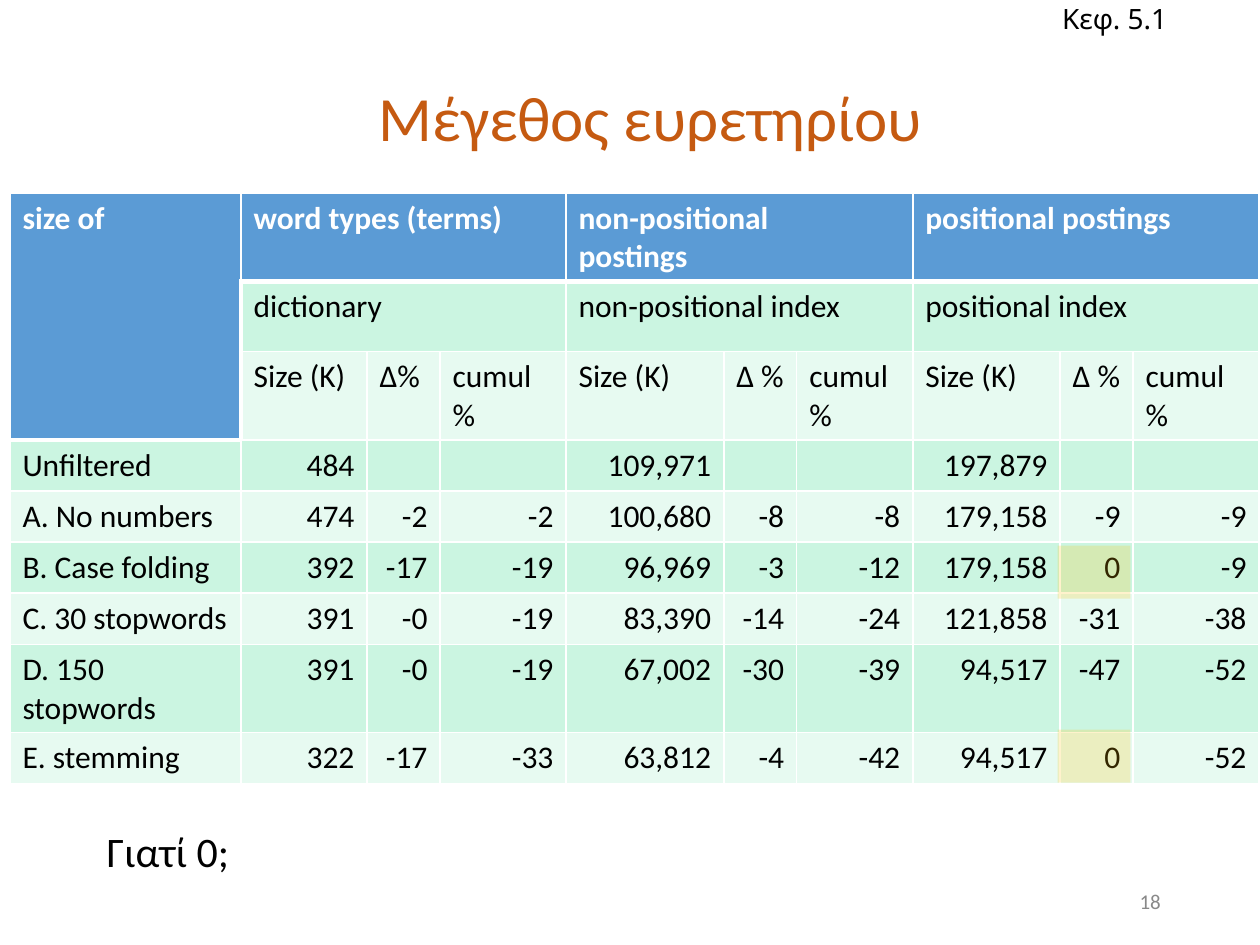
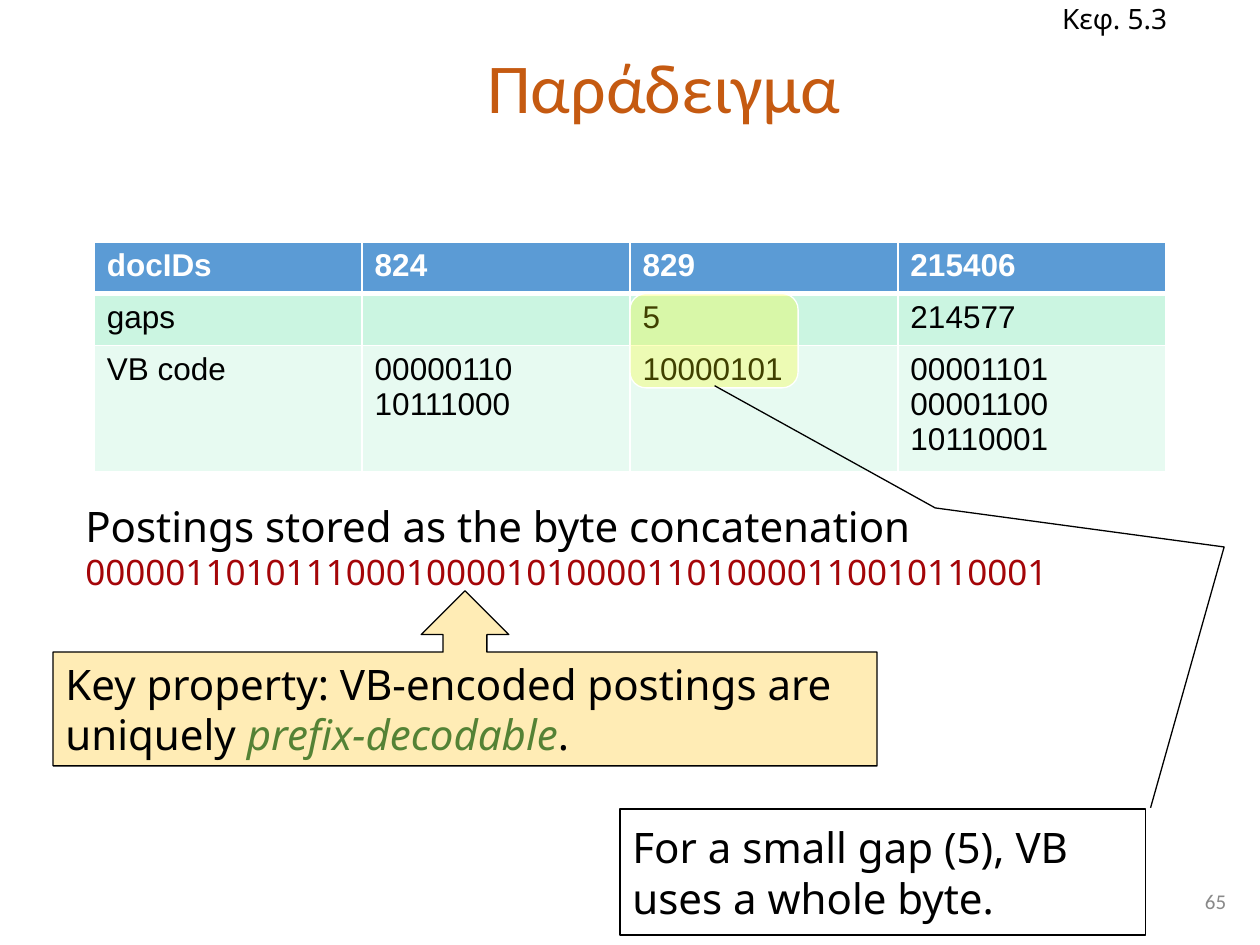
from lxml import etree
from pptx import Presentation
from pptx.dml.color import RGBColor
from pptx.enum.shapes import MSO_SHAPE
from pptx.enum.text import MSO_ANCHOR, PP_ALIGN
from pptx.oxml.ns import qn
from pptx.util import Cm, Pt

LEFT, CENTER, RIGHT = PP_ALIGN.LEFT, PP_ALIGN.CENTER, PP_ALIGN.RIGHT
TOP, MIDDLE = MSO_ANCHOR.TOP, MSO_ANCHOR.MIDDLE
RECTANGLE, ROUNDED = MSO_SHAPE.RECTANGLE, MSO_SHAPE.ROUNDED_RECTANGLE
ARROW_CALLOUT, LINE_CALLOUT = MSO_SHAPE.UP_ARROW_CALLOUT, MSO_SHAPE.LINE_CALLOUT_3

COLORS = {
    "title": "C55A11", "text": "000000", "number": "898989",
    "header": "5B9BD5", "band_dark": "CBF5E1", "band_light": "E7FAF1",
    "white": "FFFFFF", "bits": "A40508", "term": "548235",
    "amber": "FFC000", "yellow": "FFFF00",
}
HEADING_FONT, BODY_FONT, CODE_FONT = "Calibri", "Noto Sans", "Arial"
THIN, THICK = 1, 3

INDEX_COLUMNS = [4.66, 2.54, 1.47, 2.54, 3.18, 1.47, 2.34, 2.97, 1.47, 2.54]
INDEX_HEADER_ROWS = 3
INDEX_ROWS = [
    ["size of", "word types (terms)", "", "", "non-positional\npostings", "", "",
     "positional postings", "", ""],
    ["", "dictionary", "", "", "non-positional index", "", "", "positional index", "", ""],
    ["", "Size (K)", "∆%", "cumul %", "Size (K)", "∆ %", "cumul %",
     "Size (K)", "∆ %", "cumul %"],
    ["Unfiltered", "484", "", "", "109,971", "", "", "197,879", "", ""],
    ["Α. No numbers", "474", "-2", "-2", "100,680", "-8", "-8", "179,158", "-9", "-9"],
    ["Β. Case folding", "392", "-17", "-19", "96,969", "-3", "-12", "179,158", "0", "-9"],
    ["C. 30 stopwords", "391", "-0", "-19", "83,390", "-14", "-24", "121,858", "-31", "-38"],
    ["D. 150 stopwords", "391", "-0", "-19", "67,002", "-30", "-39", "94,517", "-47", "-52"],
    ["E. stemming", "322", "-17", "-33", "63,812", "-4", "-42", "94,517", "0", "-52"],
]
GAP_ROWS = [
    ["docIDs", "824", "829", "215406"],
    ["gaps", "", "5", "214577"],
    ["VB code", "00000110 10111000", "10000101", "00001101 00001100 10110001"],
]


def rgb(name):
    return RGBColor.from_string(COLORS[name])


def lengths(box):
    return [Cm(value) for value in box]


def format_run(run, size, font, color, bold=False, italic=False):
    run.font.size = Pt(size)
    run.font.name = font
    run.font.color.rgb = rgb(color)
    run.font.bold = bold
    run.font.italic = italic


def write_lines(text_frame, lines, anchor=TOP, align=LEFT):
    """Each line is a list of runs: (text, size, font, color[, bold, italic])."""
    text_frame.word_wrap = True
    text_frame.vertical_anchor = anchor
    for index, line in enumerate(lines):
        paragraph = text_frame.paragraphs[0] if index == 0 else text_frame.add_paragraph()
        paragraph.alignment = align
        for text, *style in line:
            run = paragraph.add_run()
            run.text = text
            format_run(run, *style)


def add_text(slide, box, lines, anchor=TOP, align=LEFT):
    text_box = slide.shapes.add_textbox(*lengths(box))
    write_lines(text_box.text_frame, lines, anchor, align)
    return text_box


def add_frame(slide, box, number, section, title, title_box, title_size, number_right):
    """Title, section label and page number shared by the slides."""
    left, top, width, height = box
    title_shape = add_text(slide, title_box, [[(title, title_size, HEADING_FONT, "title")]],
                           MIDDLE, CENTER)
    title_shape.text_frame.paragraphs[0].line_spacing = 0.9
    add_text(slide, (left + width - 4.24, top - 0.1, 2.79, 0.94),
             [[(section, 16, BODY_FONT, "text")]], MIDDLE)
    number_width = 5.72
    add_text(slide, (left + width - number_right - number_width, top + height - 1.4,
                     number_width, 1.02),
             [[(number, 12, HEADING_FONT, "number")]], MIDDLE, RIGHT)


def add_panel(slide, kind, box, fill=None, opacity=100, line=None, adjustments=()):
    shape = slide.shapes.add_shape(kind, *lengths(box))
    shape.shadow.inherit = False
    for index, value in enumerate(adjustments):
        shape.adjustments[index] = value
    if fill:
        shape.fill.solid()
        shape.fill.fore_color.rgb = rgb(fill)
        color = shape.element.spPr.find(qn("a:solidFill")).find(qn("a:srgbClr"))
        etree.SubElement(color, qn("a:alpha"), val=str(opacity * 1000))
    else:
        shape.fill.background()
    if line:
        shape.line.color.rgb = rgb(line)
        shape.line.width = Pt(0.75)
    else:
        shape.line.fill.background()
    return shape


def set_borders(cell, widths):
    properties = cell._tc.get_or_add_tcPr()
    for side, width in widths.items():
        border = etree.SubElement(properties, qn(f"a:ln{side}"), w=str(Pt(width)))
        fill = etree.SubElement(border, qn("a:solidFill"))
        etree.SubElement(fill, qn("a:srgbClr"), val=COLORS["white"])


def add_banded_table(slide, origin, rows, columns, heights, font, header_rows=1,
                     numbers_right=False):
    """The first row is the header; the first column joins it for header_rows rows."""
    box = (*origin, sum(columns), sum(heights))
    table = slide.shapes.add_table(len(rows), len(columns), *lengths(box)).table
    for column, width in zip(table.columns, columns):
        column.width = Cm(width)
    for row, height in zip(table.rows, heights):
        row.height = Cm(height)
    for r, values in enumerate(rows):
        for c, value in enumerate(values):
            cell = table.cell(r, c)
            is_header = r == 0 or (c == 0 and r < header_rows)
            below_header = r == 1 or (c == 0 and r == header_rows)
            header_end = r == 0 or (c == 0 and r == header_rows - 1)
            beside_header = c == 1 and 0 < r < header_rows
            set_borders(cell, {
                "L": THICK if beside_header else THIN, "R": THIN,
                "T": THICK if below_header else THIN,
                "B": THICK if header_end else THIN,
            })
            band = "band_dark" if r % 2 else "band_light"
            cell.fill.solid()
            cell.fill.fore_color.rgb = rgb("header" if is_header else band)
            cell.text_frame.text = value
            for paragraph in cell.text_frame.paragraphs:
                if numbers_right and c > 0 and r >= header_rows:
                    paragraph.alignment = RIGHT
                for run in paragraph.runs:
                    format_run(run, 18, font, "white" if is_header else "text", is_header)
    return table


def build_index_size_slide(slide, box):
    left, top, width, height = box
    add_frame(slide, box, "18", "Κεφ. 5.1", "Μέγεθος ευρετηρίου",
              (left + 1.47, top + 1.07, 23.29, 2.74), 36, 1.75)

    # Index sizes, with headings merged over each group of three columns
    table_left, table_top = left + 0.2, top + 3.89
    heights = [1.7, 1.42, 1.09] + [1.03] * 6
    table = add_banded_table(slide, (table_left, table_top), INDEX_ROWS, INDEX_COLUMNS,
                             heights, HEADING_FONT, INDEX_HEADER_ROWS, True)
    table.cell(0, 0).merge(table.cell(INDEX_HEADER_ROWS - 1, 0))
    for row in (0, 1):
        for column in (1, 4, 7):
            table.cell(row, column).merge(table.cell(row, column + 2))

    # Highlights on the two zero changes
    zero_column = 8
    zero_left = table_left + sum(INDEX_COLUMNS[:zero_column]) - 0.05
    for offset in (7.11, 10.82):
        add_panel(slide, RECTANGLE, (zero_left, table_top + offset, 1.47, 1.07), "amber", 20)

    add_text(slide, (left + 1.9, top + 16.51, 15.67, 1.27),
             [[("Γιατί 0;", 24, HEADING_FONT, "text")]])


def build_example_slide(slide, box):
    left, top, width, height = box
    add_frame(slide, box, "65", "Κεφ. 5.3", "Παράδειγμα",
              (left + 2.44, top, 21.89, 3.68), 40, 0.43)

    # Gaps and their codes
    table_left, table_top, column_width, row_height = left + 1.9, top + 4.88, 5.4, 1.04
    add_banded_table(slide, (table_left, table_top), GAP_ROWS, [column_width] * 4,
                     [row_height] * 3, CODE_FONT)

    # Concatenated bytes
    body = (24, BODY_FONT, "text")
    add_text(slide, (left + 1.47, top + 9.96, 22.33, 2.13), [
        [("Postings stored as the byte concatenation", *body)],
        [("000001101011100010000101000011010000110010110001", 20, BODY_FONT, "bits")],
    ])

    # Key property
    key_property = add_panel(slide, ARROW_CALLOUT, (left + 1.07, top + 11.91, 16.61, 3.53),
                             "amber", 29, "text", (0.25, 0.25, 0.25, 0.65))
    write_lines(key_property.text_frame, [
        [("Key property: VB-encoded postings are", *body)],
        [("uniquely ", *body),
         ("prefix-decodable", 24, BODY_FONT, "term", False, True), (".", *body)],
    ], MIDDLE)

    # Small gap, highlighted and explained
    add_panel(slide, ROUNDED, (table_left + 2 * column_width, table_top + row_height,
                               3.39, 1.9), "yellow", 25, "white", (0.17,))
    small_gap = add_panel(slide, LINE_CALLOUT, (left + 12.5, top + 16.31, 10.59, 2.54),
                          line="text",
                          adjustments=(-0.01, 1.01, -2.08, 1.15, -2.39, 0.6, -3.36, 0.18))
    write_lines(small_gap.text_frame, [
        [("For a small gap (5), VB", *body)],
        [("uses a whole byte.", *body)],
    ], MIDDLE)


def main():
    presentation = Presentation()
    slide_box = (0, 0, 25.4, 19.05)
    presentation.slide_width, presentation.slide_height = lengths(slide_box[2:])
    blank_layout = presentation.slide_layouts[6]
    for build in (build_index_size_slide, build_example_slide):
        build(presentation.slides.add_slide(blank_layout), slide_box)
    presentation.save("out.pptx")


if __name__ == "__main__":
    main()
